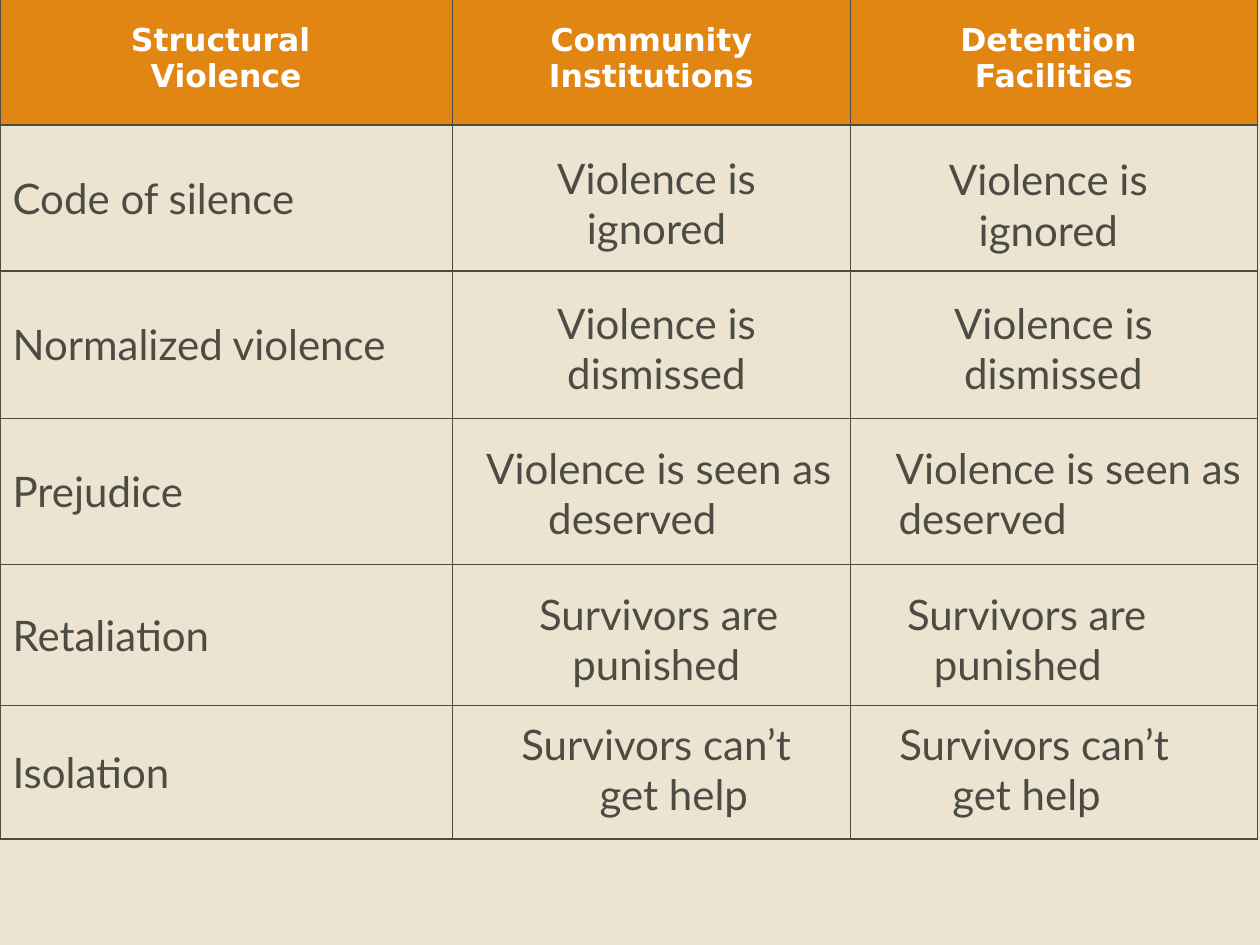
from dataclasses import dataclass

from lxml.etree import SubElement
from pptx import Presentation
from pptx.dml.color import RGBColor
from pptx.enum.text import MSO_ANCHOR, MSO_AUTO_SIZE, PP_ALIGN
from pptx.oxml.ns import qn
from pptx.util import Inches, Pt


@dataclass(frozen=True)
class Theme:
    """Colours, fonts and type sizes of the slide."""
    background: str = "ECE4D1"
    header: str = "E18613"
    white: str = "FFFFFF"
    ink: str = "4C4C44"
    header_font: str = "DejaVu Sans"
    body_font: str = "Lato"
    header_size: int = 18
    body_size: int = 24


THEME = Theme()
COLUMNS = (3.59, 3.16, 3.23)
ROWS = (1.05, 1.16, 1.17, 1.16, 1.12, 1.06)
HEADERS = (("Structural ", "Violence"), ("Community Institutions",),
           ("Detention ", "Facilities"))
TOPICS = ("Code of silence", "Normalized violence", "Prejudice",
          "Retaliation", "Isolation")
CENTERED_NOTES = (
    (3.54, 1.16, "Violence is ignored"),
    (6.65, 1.17, "Violence is ignored"),
    (3.54, 2.31, "Violence is dismissed"),
    (6.69, 2.31, "Violence is dismissed"),
)
PAIRED_NOTES = (
    (3.61, 3.46, 6.38, (("Violence is seen as", 1.52, 4.77),
                        ("deserved", 1.31, 4.09))),
    (3.52, 4.62, 6.3, (("Survivors are", 1.61, 4.53),
                       ("punished", 1.59, 4.46))),
    (3.61, 5.65, 6.16, (("Survivors can’t", 1.5, 4.5),
                        ("get help", 1.64, 4.44))),
)


def add_run(p, text, header=False):
    """Add a run in the header or body style."""
    r = p.add_run()
    r.text = text
    r.font.name = THEME.header_font if header else THEME.body_font
    r.font.size = Pt(THEME.header_size if header else THEME.body_size)
    r.font.bold = header
    r.font.color.rgb = RGBColor.from_string(THEME.white if header else THEME.ink)


def add_lines(tf, lines, align, header=False):
    """Write one paragraph per line and return the paragraphs."""
    for i, line in enumerate(lines):
        p = tf.paragraphs[0] if i == 0 else tf.add_paragraph()
        p.alignment = align
        add_run(p, line, header)
    return tf.paragraphs


def style_cell(cell, header):
    """Set the borders, fill, margins and anchor of a cell."""
    tcPr = cell._tc.get_or_add_tcPr()
    for side in ("a:lnL", "a:lnR", "a:lnT", "a:lnB"):
        ln = SubElement(tcPr, qn(side), w=str(Pt(1)))
        fill = SubElement(ln, qn("a:solidFill"))
        SubElement(fill, qn("a:srgbClr"), val=THEME.ink)
    if header:
        cell.fill.solid()
        cell.fill.fore_color.rgb = RGBColor.from_string(THEME.header)
    else:
        cell.fill.background()
    cell.margin_left = cell.margin_right = Inches(0.1)
    cell.margin_top = cell.margin_bottom = Inches(0.1)
    cell.vertical_anchor = MSO_ANCHOR.MIDDLE


def add_violence_table(s):
    """Add the table with its headers and topics."""
    table = s.shapes.add_table(
        len(ROWS), len(COLUMNS), Inches(0), Inches(-0.06),
        Inches(sum(COLUMNS)), Inches(sum(ROWS))).table
    for column, width in zip(table.columns, COLUMNS):
        column.width = Inches(width)
    for i, (row, height) in enumerate(zip(table.rows, ROWS)):
        row.height = Inches(height)
        for cell in row.cells:
            style_cell(cell, header=i == 0)
    for j, lines in enumerate(HEADERS):
        add_lines(table.cell(0, j).text_frame, lines, PP_ALIGN.CENTER, True)
    for i, topic in enumerate(TOPICS, 1):
        add_lines(table.cell(i, 0).text_frame, [topic], PP_ALIGN.LEFT)


def add_text_box(s, left, top, width):
    """Add a wrapping text box and return its text frame."""
    sp = s.shapes.add_textbox(Inches(left), Inches(top), Inches(width), Inches(0.91))
    tf = sp.text_frame
    tf.word_wrap = True
    tf.auto_size = MSO_AUTO_SIZE.SHAPE_TO_FIT_TEXT
    return tf


def add_centered_note(s, left, top, text):
    """Add a centred, indented note for a single column."""
    tf = add_text_box(s, left, top, 3.15)
    p = add_lines(tf, [text], PP_ALIGN.CENTER)[0]
    p._p.get_or_add_pPr().set("marL", str(Inches(0.19)))


def add_paired_note(s, left, top, width, lines):
    """Add a note repeated across two columns on centred tab stops."""
    tf = add_text_box(s, left, top, width)
    texts = [f"\t{text}\t{text}" for text, *_ in lines]
    for p, (_, *stops) in zip(add_lines(tf, texts, PP_ALIGN.LEFT), lines):
        tabs = SubElement(p._p.get_or_add_pPr(), qn("a:tabLst"))
        for stop in stops:
            SubElement(tabs, qn("a:tab"), pos=str(Inches(stop)), algn="ctr")


def main():
    """Build and save the slide."""
    prs = Presentation()
    prs.slide_width, prs.slide_height = Inches(10), Inches(7.5)
    s = prs.slides.add_slide(prs.slide_layouts[6])
    s.background.fill.solid()
    s.background.fill.fore_color.rgb = RGBColor.from_string(THEME.background)
    add_violence_table(s)
    for note in CENTERED_NOTES:
        add_centered_note(s, *note)
    for note in PAIRED_NOTES:
        add_paired_note(s, *note)
    prs.save("out.pptx")


if __name__ == "__main__":
    main()
